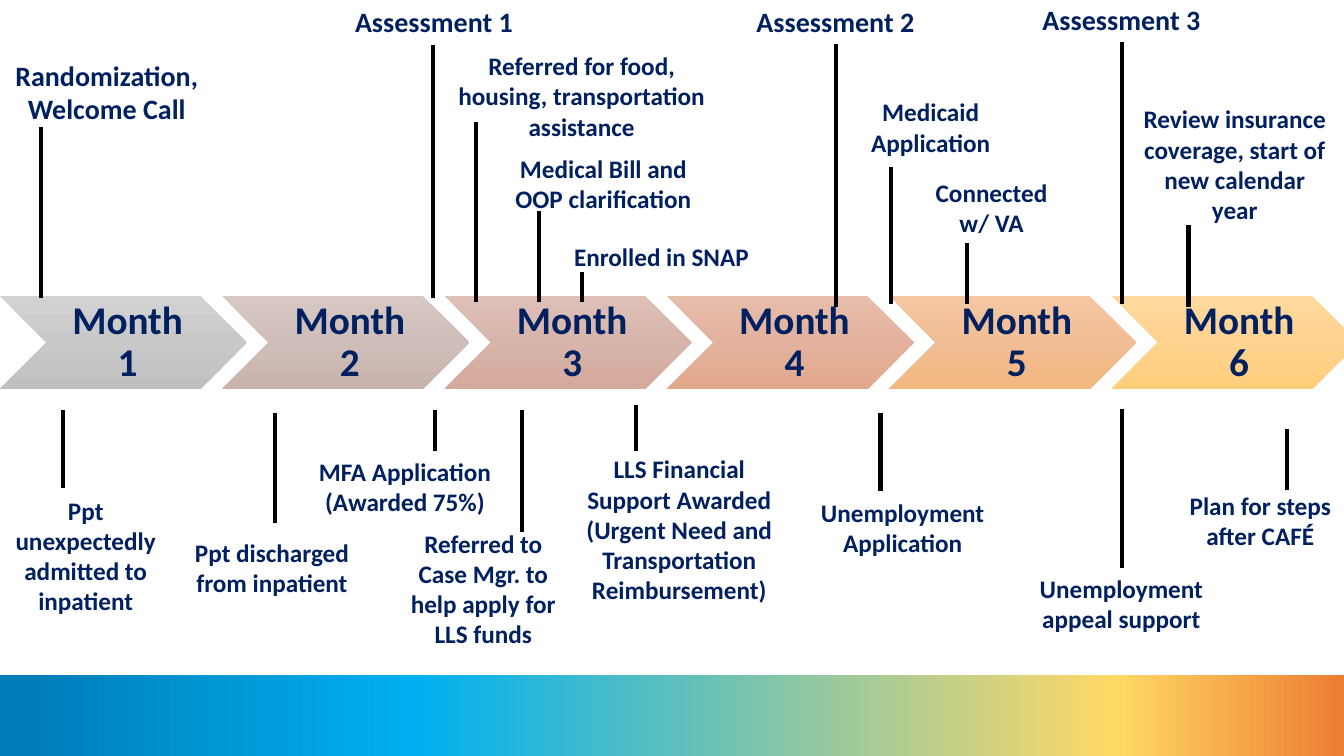
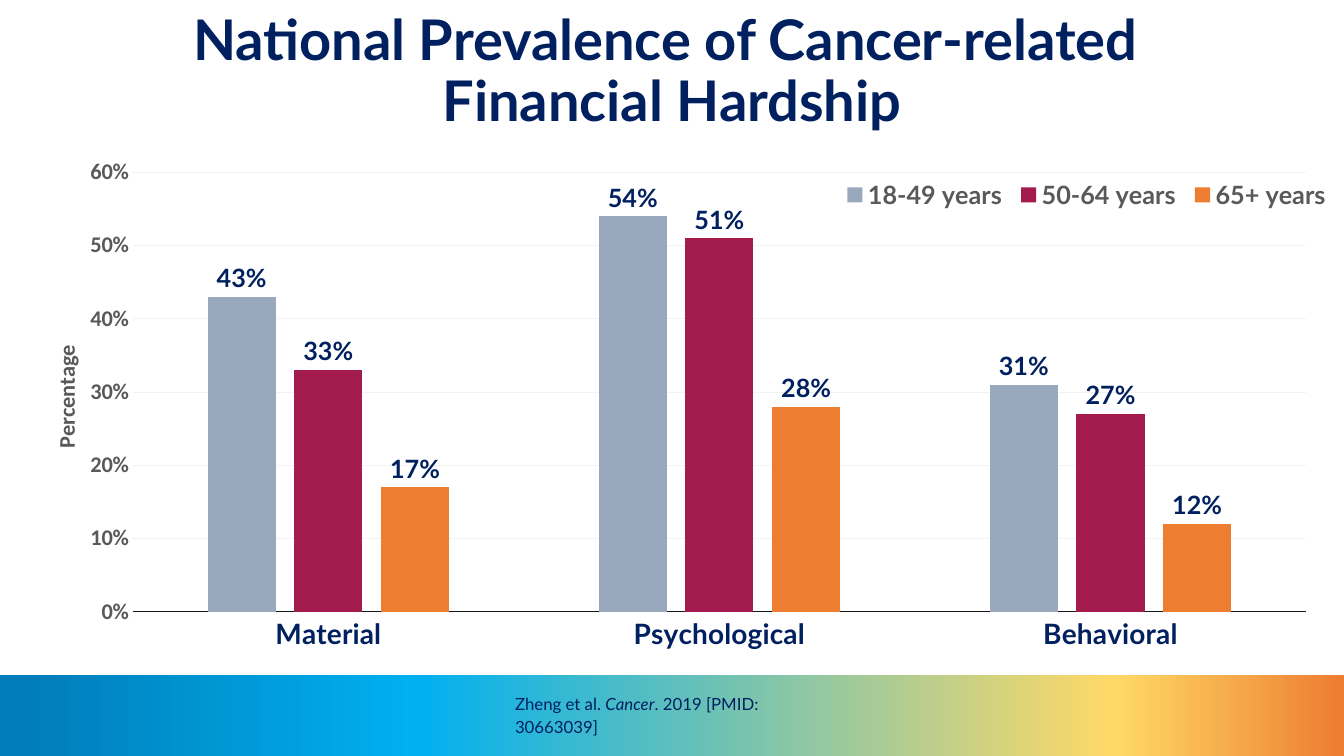
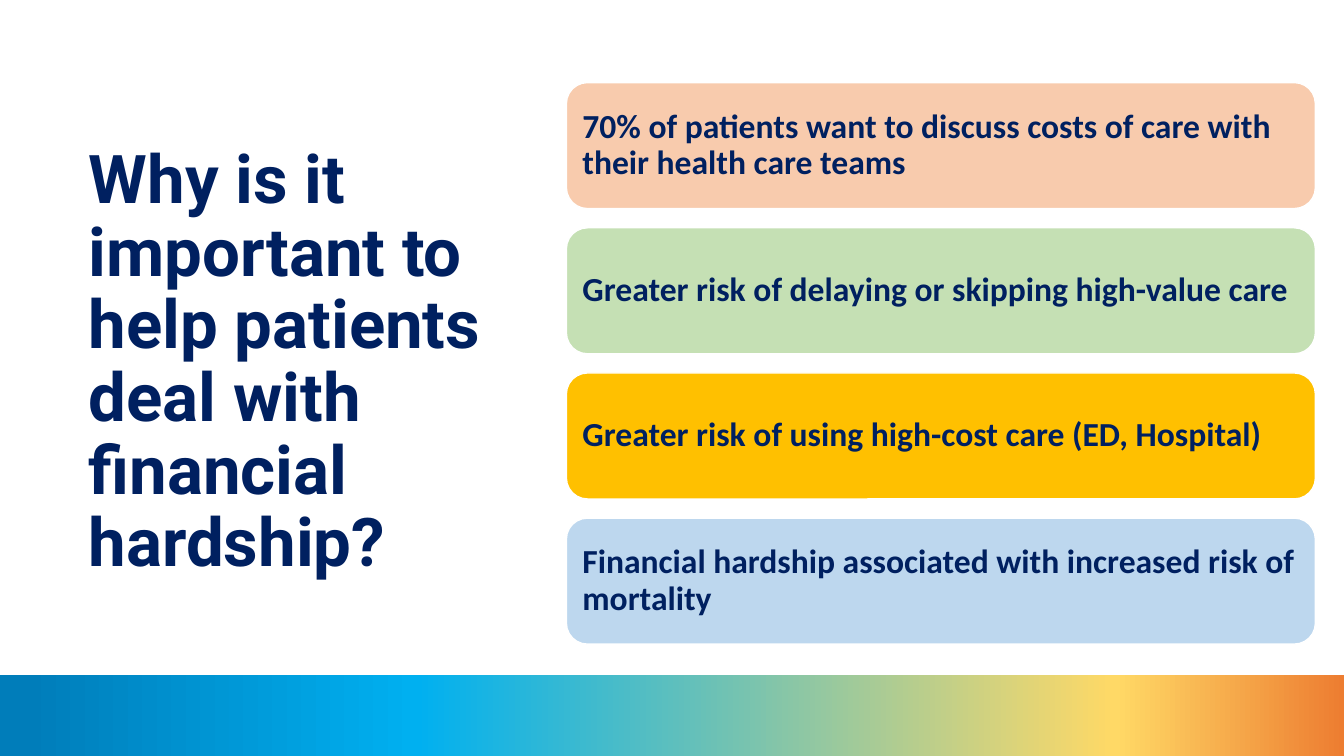
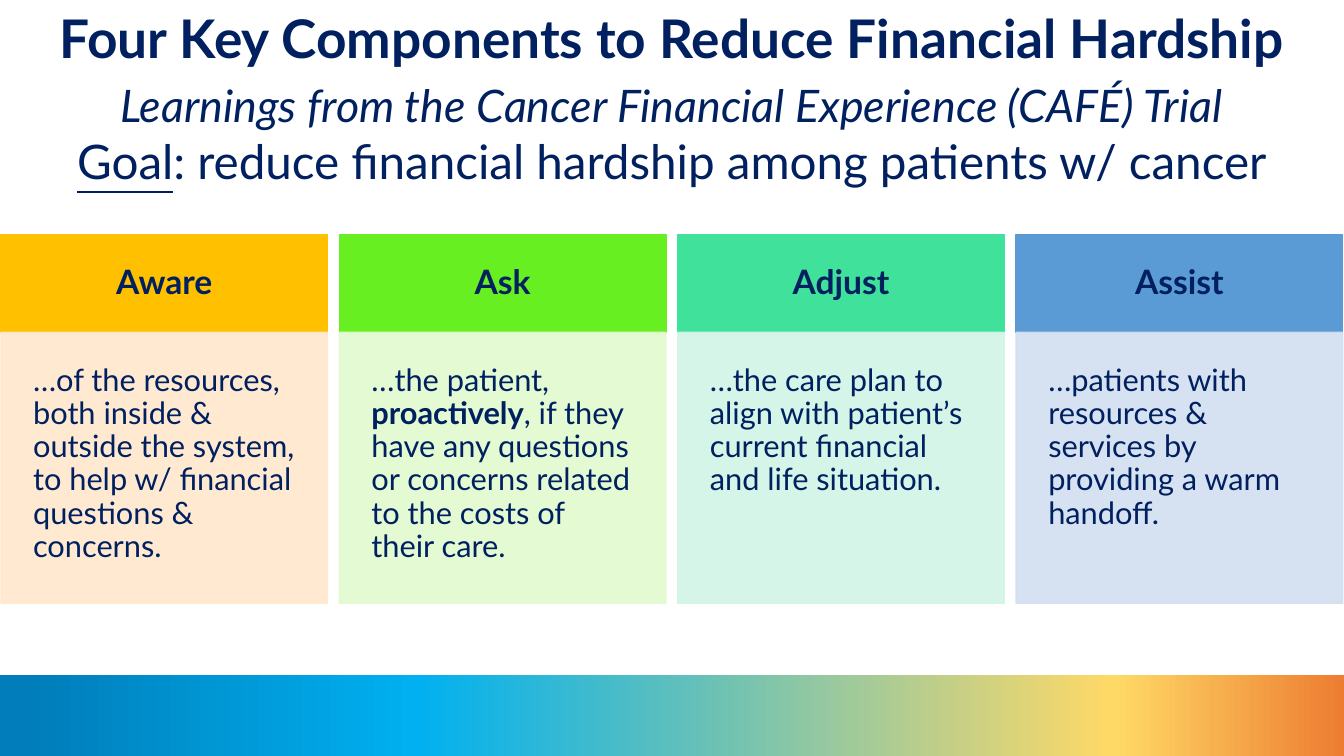
"""Build four slides on cancer-related financial hardship."""
from lxml.etree import SubElement
from pptx import Presentation
from pptx.chart.data import CategoryChartData
from pptx.dml.color import RGBColor
from pptx.enum.chart import XL_CHART_TYPE, XL_LABEL_POSITION, XL_LEGEND_POSITION, XL_TICK_MARK
from pptx.enum.shapes import MSO_CONNECTOR, MSO_SHAPE
from pptx.enum.text import MSO_ANCHOR, PP_ALIGN
from pptx.oxml.ns import qn
from pptx.util import Pt

NAVY, GREY = "002060", "595959"
WIDTH, HEIGHT = 960, 540
BAND = [(2, "007DBA"), (31, "00B0F0"), (83, "FFD966"), (100, "ED7D31")]

MONTHS = [
    ("D2D2D2", "C8C8C8", "C0C0C0"),
    ("D7C8C4", "CEBDB9", "C9B3AE"),
    ("DEC0B7", "D7B4AA", "D4A99B"),
    ("E7BDAB", "E3B19D", "E2A88B"),
    ("F4C6A2", "F1BD94", "F3B880"),
    ("FFD99E", "FFD390", "FFCE7C"),
]
# text, left, top, width, lines
MILESTONES = [
    ("Randomization,\nWelcome Call", 0, 38, 152.5, 2),
    ("Assessment 1", 241, 0, 138, 1),
    ("Assessment 2", 531.5, 0, 130.5, 1),
    ("Assessment 3", 735, -1.5, 132, 1),
]
EVENTS = [
    ("Referred for food, housing, transportation assistance", 317.5, 32.5, 196, 3),
    ("Medical Bill and OOP clarification", 360, 106, 142, 2),
    ("Enrolled in SNAP", 397.5, 169, 150, 1),
    ("Medicaid Application", 614, 65.5, 101.5, 2),
    ("Connected w/ VA", 657.5, 123, 101.5, 2),
    ("Review insurance coverage, start of new calendar year", 808.5, 70.5, 147, 4),
    ("Ppt unexpectedly admitted to inpatient", -6.5, 350, 135.5, 4),
    ("Ppt discharged from inpatient", 131, 380, 126.5, 2),
    ("MFA Application\n(Awarded 75%)", 219, 322.5, 140.5, 2),
    ("Referred to Case Mgr. to help apply for LLS funds", 280, 373.5, 130.5, 4),
    ("LLS Financial Support Awarded\n(Urgent Need and Transportation\nReimbursement)",
     406, 320.5, 158.5, 5),
    ("Unemployment Application", 576, 351.5, 137.5, 2),
    ("Unemployment appeal support", 730, 406, 142, 2),
    ("Plan for steps after CAFÉ", 835, 346.5, 130.5, 2),
]
MARKS = [
    (29.5, 90.5, 213), (309.5, 32.5, 213), (340, 87, 215.5), (385, 151, 215.5),
    (415.5, 194.5, 215.5), (597, 31.5, 219.5), (636.5, 119.5, 217.5), (690.5, 173.5, 217.5),
    (801.5, 30, 217.5), (849, 160.5, 219), (45, 293, 348.5), (196.5, 295, 373.5),
    (310.5, 293, 322), (373, 293, 380), (454.5, 289.5, 322), (629, 295, 350.5),
    (801.5, 292.5, 406), (919.5, 306.5, 350),
]

HARDSHIPS = ["Material", "Psychological", "Behavioral"]
AGE_GROUPS = [
    ("18-49 years", "99A8BD", (0.43, 0.54, 0.31)),
    ("50-64 years", "A41C4D", (0.33, 0.51, 0.27)),
    ("65+ years", "ED7D31", (0.17, 0.28, 0.12)),
]

REASONS = [
    ("70% of patients want to discuss costs of care with their health care teams", "F8CBAD"),
    ("Greater risk of delaying or skipping high-value care", "C5E0B4"),
    ("Greater risk of using high-cost care (ED, Hospital)", "FFC000"),
    ("Financial hardship associated with increased risk of mortality", "BDD7EE"),
]

COMPONENTS = [
    ("Aware", "FFC000", "FFE8CC",
     [("…of the resources, both inside & outside the system, "
       "to help w/ financial questions & concerns.", "")]),
    ("Ask", "67EF21", "E1FACE",
     [("…the patient, ", ""), ("proactively", "b"),
      (", if they have any questions or concerns related to the costs of their care.", "")]),
    ("Adjust", "3FE19B", "D0F5E5",
     [("…the care plan to align with patient’s current financial and life situation.", "")]),
    ("Assist", "5B9BD5", "D2DFF0",
     [("…patients with resources & services by providing a warm handoff.", "")]),
]


def rgb(code):
    """Return the colour for a hex string."""
    return RGBColor.from_string(code)


def style(font, size, name, color=NAVY, bold=True):
    """Set the basic look of a font."""
    font.size, font.name, font.bold = Pt(size), name, bold
    font.color.rgb = rgb(color)


def frame(shape, margins=(7.2, 3.6, 7.2, 3.6), anchor=MSO_ANCHOR.TOP):
    """Prepare and return a wrapping text frame."""
    tf = shape.text_frame
    tf.word_wrap, tf.vertical_anchor = True, anchor
    tf.margin_left, tf.margin_top, tf.margin_right, tf.margin_bottom = map(Pt, margins)
    return tf


def write(tf, text, size, name="Calibri", bold=True, align=PP_ALIGN.CENTER, spacing=0.9):
    """Write plain text in one look."""
    tf.text = text
    for p in tf.paragraphs:
        p.alignment, p.line_spacing = align, spacing
        for r in p.runs:
            style(r.font, size, name, bold=bold)


def write_runs(p, runs, size, align=PP_ALIGN.LEFT, spacing=0.9):
    """Add Lato runs marked b, i or u to a paragraph."""
    p.alignment, p.line_spacing = align, spacing
    for text, marks in runs:
        r = p.add_run()
        r.text = text
        style(r.font, size, "Lato", bold="b" in marks)
        r.font.italic, r.font.underline = "i" in marks, "u" in marks


def add_text(s, left, top, width, height, **options):
    """Add a text box and return its frame."""
    return frame(s.shapes.add_textbox(Pt(left), Pt(top), Pt(width), Pt(height)), **options)


def add_block(s, kind, left, top, width, height, fill=None, line=None):
    """Add a flat shape."""
    sp = s.shapes.add_shape(kind, Pt(left), Pt(top), Pt(width), Pt(height))
    sp.shadow.inherit = False
    if fill:
        sp.fill.solid()
        sp.fill.fore_color.rgb = rgb(fill)
    if line:
        sp.line.color.rgb = rgb(line)
        sp.line.width = Pt(1)
    else:
        sp.line.fill.background()
    return sp


def shade(sp, stops, angle):
    """Fill a shape with a linear gradient."""
    sp.fill.gradient()
    sp.fill.gradient_angle = angle
    gs_list = next(sp.element.iter(qn("a:gsLst")))
    gs_list.clear()
    for percent, code in stops:
        gs = SubElement(gs_list, qn("a:gs"), pos=str(percent * 1000))
        SubElement(gs, qn("a:srgbClr"), val=code)


def new_slide(prs):
    """Add a blank slide with the gradient band."""
    s = prs.slides.add_slide(prs.slide_layouts[6])
    shade(add_block(s, MSO_SHAPE.RECTANGLE, 0, 482.4, WIDTH, HEIGHT - 482.4), BAND, 0)
    return s


def place(element, index, left, top, width=None, height=None):
    """Give a chart part a manual layout."""
    for old in element.findall(qn("c:layout")):
        element.remove(old)
    layout = element.makeelement(qn("c:layout"))
    element.insert(index, layout)
    manual = SubElement(layout, qn("c:manualLayout"))
    if element.tag == qn("c:plotArea"):
        SubElement(manual, qn("c:layoutTarget"), val="inner")
    for tag in ("xMode", "yMode"):
        SubElement(manual, qn("c:" + tag), val="edge")
    for tag, value in zip("xywh", (left, top, width, height)):
        if value is not None:
            SubElement(manual, qn("c:" + tag), val=str(value))


def timeline_slide(prs):
    """Show six months of events along a chevron arrow."""
    s = new_slide(prs)
    for i, colors in enumerate(MONTHS):
        sp = add_block(s, MSO_SHAPE.CHEVRON, i * 158.8, 211.5, 176.4, 66.3)
        shade(sp, zip((0, 50, 100), colors), 270)
        tf = frame(sp, (10.8, 2.9, 5, 2.9), MSO_ANCHOR.MIDDLE)
        write(tf, f"Month {i + 1}", 28)
    for size, events in ((20, MILESTONES), (18, EVENTS)):
        for text, left, top, width, lines in events:
            tf = add_text(s, left, top, width, 7.2 + lines * size * 1.21)
            write(tf, text, size, spacing=1)
    for x, top, bottom in MARKS:
        mark = s.shapes.add_connector(MSO_CONNECTOR.STRAIGHT, Pt(x), Pt(top), Pt(x), Pt(bottom))
        mark.line.color.rgb = rgb("000000")
        mark.line.width = Pt(3)
        SubElement(mark.element.spPr, qn("a:effectLst"))


def chart_slide(prs):
    """Compare hardship by age group."""
    s = new_slide(prs)
    tf = add_text(s, 0, 0, WIDTH, 104.4, anchor=MSO_ANCHOR.MIDDLE)
    write(tf, "National Prevalence of Cancer-related \nFinancial Hardship", 40, "Lato")

    data = CategoryChartData(number_format="0%")
    data.categories = HARDSHIPS
    for name, _, values in AGE_GROUPS:
        data.add_series(name, values)
    chart = s.shapes.add_chart(XL_CHART_TYPE.COLUMN_CLUSTERED, Pt(15), Pt(104.4),
                               Pt(939.6), Pt(366.5), data).chart
    chart.has_title = False
    style(chart.font, 10, "Calibri", "000000", False)
    plot = chart.plots[0]
    plot.gap_width, plot.overlap, plot.vary_by_categories = 219, -27, False
    for series, (_, color, _) in zip(plot.series, AGE_GROUPS):
        series.format.fill.solid()
        series.format.fill.fore_color.rgb = rgb(color)
    plot.has_data_labels = True
    labels = plot.data_labels
    labels.show_value, labels.position = True, XL_LABEL_POSITION.OUTSIDE_END
    labels.number_format, labels.number_format_is_linked = "0%", False
    style(labels.font, 18, "Lato")

    cat, val = chart.category_axis, chart.value_axis
    cat.major_tick_mark = val.major_tick_mark = XL_TICK_MARK.NONE
    style(cat.tick_labels.font, 20, "Lato")
    cat.format.line.color.rgb = rgb("181717")
    cat.format.line.width = Pt(0.75)
    val.minimum_scale, val.maximum_scale, val.major_unit = 0, 0.6, 0.1
    style(val.tick_labels.font, 16, "Calibri", GREY)
    val.tick_labels.number_format, val.tick_labels.number_format_is_linked = "0%", False
    val.format.line.fill.background()
    val.major_gridlines.format.line.color.rgb = rgb("F2F2F2")
    val.major_gridlines.format.line.width = Pt(0.75)
    tf = val.axis_title.text_frame
    tf.text = "Percentage"
    style(tf.paragraphs[0].runs[0].font, 16, "Calibri", GREY)

    chart.has_legend = True
    chart.legend.position = XL_LEGEND_POSITION.BOTTOM
    chart.legend.include_in_layout = False
    style(chart.legend.font, 18, "Lato", GREY)
    title = next(chart.element.iter(qn("c:title")))
    next(title.iter(qn("a:bodyPr"))).set("rot", "-5400000")
    place(title, 1, 0.02, 0.38)
    place(next(chart.element.iter(qn("c:legend"))), 1, 0.62, 0.06, 0.38, 0.07)
    place(next(chart.element.iter(qn("c:plotArea"))), 0, 0.085, 0.051, 0.892, 0.857)

    tf = add_text(s, 356.4, 489.6, 247, 23, margins=(11.5, 3.6, 7.2, 3.6))
    citation = [("Zheng et al. ", ""), ("Cancer", "i"), (". 2019 [PMID: 30663039]", "")]
    write_runs(tf.paragraphs[0], citation, 12, spacing=1.15)


def reasons_slide(prs):
    """List why help with hardship matters."""
    s = new_slide(prs)
    tf = add_text(s, 56.2, 57.6, 323.3, 404, anchor=MSO_ANCHOR.MIDDLE)
    write(tf, "Why is it important to help patients deal with financial hardship?",
          48, "Roboto", align=PP_ALIGN.LEFT)
    for i, (text, color) in enumerate(REASONS):
        sp = add_block(s, MSO_SHAPE.ROUNDED_RECTANGLE, 404.6, 59 + i * 103.7, 535, 90,
                       color, "FFFFFF")
        write(frame(sp, (7.2,) * 4, MSO_ANCHOR.MIDDLE), text, 24, align=PP_ALIGN.LEFT)


def components_slide(prs):
    """Show the four components as headed columns."""
    s = new_slide(prs)
    for i, (head, strong, pale, runs) in enumerate(COMPONENTS):
        left = 0.7 + i * 241.7
        sp = add_block(s, MSO_SHAPE.RECTANGLE, left, 167.7, 233.3, 69.8, strong, strong)
        write(frame(sp, (18.7,) * 4, MSO_ANCHOR.MIDDLE), head, 24, "Lato")
        sp = add_block(s, MSO_SHAPE.RECTANGLE, left, 237.5, 233.3, 193.5, pale, pale)
        for color in sp.element.spPr.iter(qn("a:srgbClr")):
            SubElement(color, qn("a:alpha"), val="90000")
        write_runs(frame(sp, (23,) * 4).paragraphs[0], runs, 22)

    tf = add_text(s, 0, 0, WIDTH, 145.4)
    heading = [
        (38, 0, [("Four Key Components to Reduce Financial Hardship", "b")]),
        (32, 6, [("Learnings from the Cancer Financial Experience (CAFÉ) Trial", "i")]),
        (34, 1, [("Goal", "u"), (": reduce financial hardship among patients w/ cancer", "")]),
    ]
    for i, (size, before, runs) in enumerate(heading):
        p = tf.add_paragraph() if i else tf.paragraphs[0]
        if before:
            p.space_before = Pt(before)
        write_runs(p, runs, size, PP_ALIGN.CENTER, 1)


def main():
    """Build and save the presentation."""
    prs = Presentation()
    prs.slide_width, prs.slide_height = Pt(WIDTH), Pt(HEIGHT)
    for build in (timeline_slide, chart_slide, reasons_slide, components_slide):
        build(prs)
    prs.save("out.pptx")


if __name__ == "__main__":
    main()
